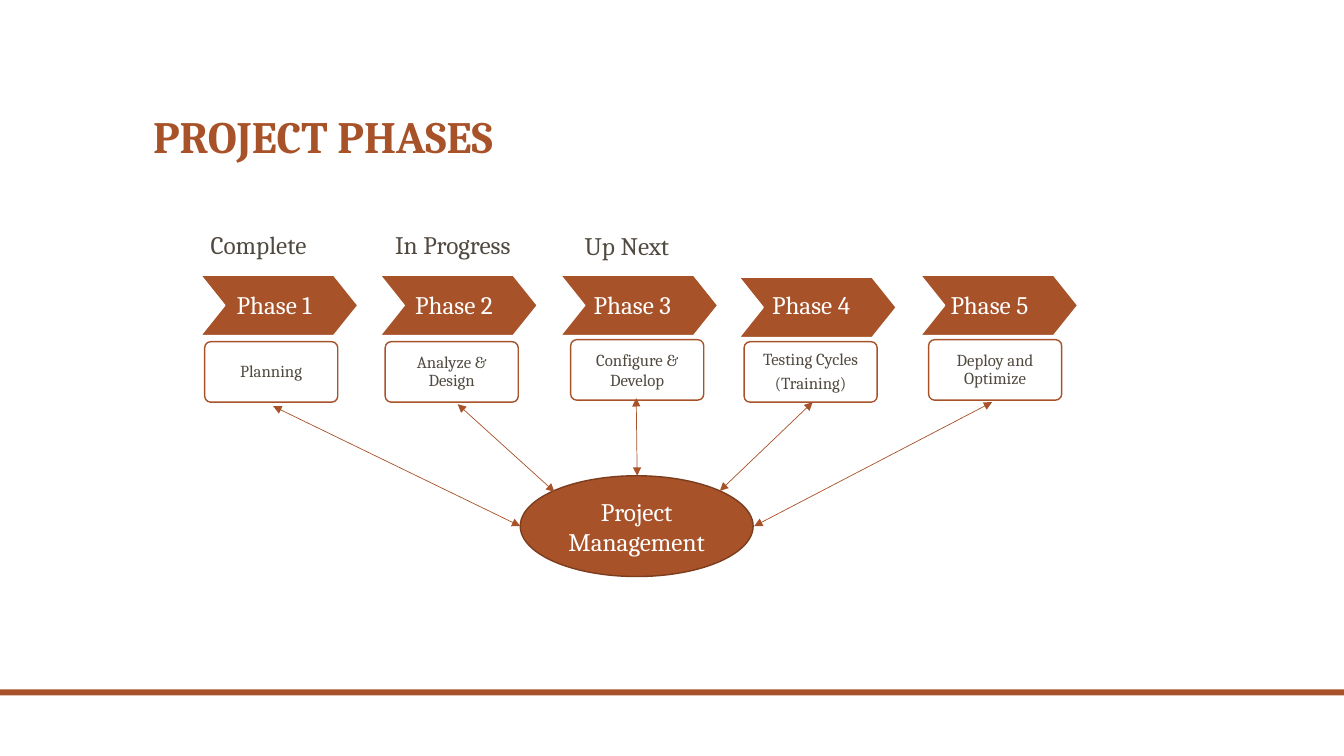
from lxml import etree
from pptx import Presentation
from pptx.dml.color import RGBColor
from pptx.enum.shapes import MSO_CONNECTOR, MSO_SHAPE
from pptx.enum.text import MSO_ANCHOR, PP_ALIGN
from pptx.oxml.ns import qn
from pptx.util import Inches, Pt

RUST = RGBColor(0xA8, 0x52, 0x29)
DARK_RUST = RGBColor(0x7C, 0x3D, 0x1E)
TAUPE = RGBColor(0x51, 0x4A, 0x40)
WHITE = RGBColor(0xFF, 0xFF, 0xFF)
FONT = "Cambria"
LEFT, CENTER = PP_ALIGN.LEFT, PP_ALIGN.CENTER
TOP, MIDDLE, BOTTOM = MSO_ANCHOR.TOP, MSO_ANCHOR.MIDDLE, MSO_ANCHOR.BOTTOM
RECT, CHEVRON = MSO_SHAPE.RECTANGLE, MSO_SHAPE.CHEVRON
ROUNDED, OVAL = MSO_SHAPE.ROUNDED_RECTANGLE, MSO_SHAPE.OVAL
STRAIGHT = MSO_CONNECTOR.STRAIGHT

TITLE = "PROJECT PHASES"
HUB = "Project Management"
# name, chevron (left, top), activity, box (left, top), line spacing
PHASES = [
    ("Phase 1", (1.99, 2.73), "Planning", (2.03, 3.39), 0.9),
    ("Phase 2", (3.77, 2.73), "Analyze & Design", (3.82, 3.39), 0.9),
    ("Phase 3", (5.56, 2.73), "Configure & Develop", (5.66, 3.37), 1.0),
    ("Phase 4", (7.33, 2.75), "Testing Cycles\n(Training)", (7.38, 3.39), 0.9),
    ("Phase 5", (9.13, 2.73), "Deploy and Optimize", (9.21, 3.37), 0.9),
]
# text, left, top, width
STATUSES = [
    ("Complete", 1.99, 2.23, 1.25),
    ("In Progress", 3.82, 2.23, 1.44),
    ("Up Next", 5.7, 2.24, 1.44),
]
# hub end, phase end
ARROWS = [
    ((5.16, 5.22), (2.71, 4.03)),
    ((5.5, 4.88), (4.54, 4.01)),
    ((6.32, 4.72), (6.31, 3.95)),
    ((7.14, 4.87), (8.06, 3.99)),
    ((7.48, 5.22), (9.84, 3.99)),
]
LABEL_LEFT, LABEL_PITCH = 2.25, 1.77

prs = Presentation()
prs.slide_width, prs.slide_height = Inches(13.33), Inches(7.5)
slide = prs.slides.add_slide(prs.slide_layouts[6])
shapes = slide.shapes


def write(sp, text, size, color, align=LEFT, anchor=TOP, bold=False,
          spacing=1.0, after=0, inset=None):
    tf = sp.text_frame
    tf.text = text
    tf.word_wrap = True
    tf.vertical_anchor = anchor
    if inset is not None:
        tf.margin_left = tf.margin_right = Inches(inset)
        tf.margin_top = tf.margin_bottom = Inches(inset)
    for p in tf.paragraphs:
        p.alignment = align
        p.line_spacing = spacing
        p.space_after = Pt(after)
        for r in p.runs:
            r.font.name, r.font.size = FONT, Pt(size)
            r.font.bold, r.font.color.rgb = bold, color


def add_text(box, text, size, color, **style):
    sp = shapes.add_textbox(*map(Inches, box))
    write(sp, text, size, color, **style)


def add_block(kind, box, fill, line=None, adjust=None):
    sp = shapes.add_shape(kind, *map(Inches, box))
    sp.shadow.inherit = False
    sp.fill.solid()
    sp.fill.fore_color.rgb = fill
    if line is None:
        sp.line.fill.background()
    else:
        sp.line.color.rgb, sp.line.width = line, Pt(1)
    if adjust is not None:
        sp.adjustments[0] = adjust
    return sp


def add_double_arrow(start, end):
    cn = shapes.add_connector(STRAIGHT, *map(Inches, start + end))
    cn.line.color.rgb, cn.line.width = RUST, Pt(0.5)
    ln = cn.line._get_or_add_ln()
    for tag in ("a:headEnd", "a:tailEnd"):
        etree.SubElement(ln, qn(tag), type="triangle")
    etree.SubElement(cn._element.spPr, qn("a:effectLst"))


add_block(RECT, (0, 6.84, 13.33, 0.06), RUST)
add_text((1.42, 0.42, 10.5, 1.25), TITLE, 32, RUST,
         anchor=BOTTOM, bold=True, spacing=0.9)

for i, (name, arrow_at, activity, box_at, spacing) in enumerate(PHASES):
    add_block(CHEVRON, (*arrow_at, 1.56, 0.6), RUST, WHITE, 0.4)
    add_text((LABEL_LEFT + i * LABEL_PITCH, 2.82, 1.14, 0.4), name, 18, WHITE)
    box = add_block(ROUNDED, (*box_at, 1.32, 0.6), WHITE, RUST, 0.1)
    write(box, activity, 12, TAUPE, align=CENTER, anchor=MIDDLE,
          spacing=spacing, after=4, inset=0.09)

hub = add_block(OVAL, (5.16, 4.72, 2.31, 1), RUST, DARK_RUST)
write(hub, HUB, 18, WHITE, align=CENTER, anchor=MIDDLE, inset=0)

for start, end in ARROWS:
    add_double_arrow(start, end)

for text, left, top, width in STATUSES:
    add_text((left, top, width, 0.4), text, 18, TAUPE)

prs.save("out.pptx")
